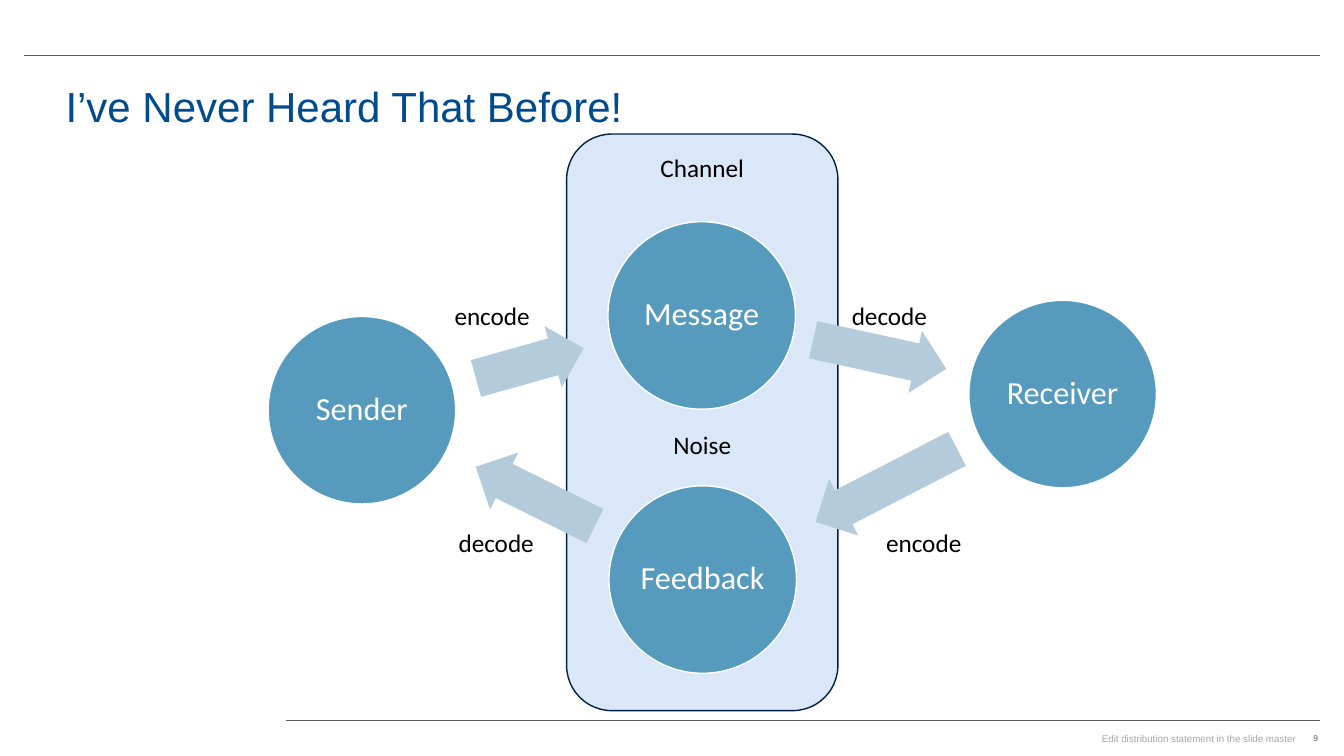
from dataclasses import dataclass

from pptx import Presentation
from pptx.dml.color import RGBColor
from pptx.enum import shapes, text
from pptx.oxml import ns
from pptx.util import Inches, Pt

NAVY = RGBColor(0x00, 0x4B, 0x8D)
OUTLINE = RGBColor(0x00, 0x21, 0x3E)
PALE_BLUE = RGBColor(0xD9, 0xE7, 0xF9)
CIRCLE_BLUE = RGBColor(0x56, 0x9B, 0xBE)
ARROW_BLUE = RGBColor(0xB4, 0xCB, 0xDB)
RULE_GRAY = RGBColor(0x59, 0x5A, 0x59)
FOOTER_GRAY = RGBColor(0xA6, 0xA6, 0xA6)
WHITE = RGBColor(0xFF, 0xFF, 0xFF)
BLACK = RGBColor(0x00, 0x00, 0x00)

CIRCLE_SIZE = 1.86
ARROW_HEIGHT = 0.63


@dataclass(frozen=True)
class Stage:
    name: str
    left: float
    top: float


@dataclass(frozen=True)
class Flow:
    left: float
    top: float
    length: float
    rotation: float


@dataclass(frozen=True)
class Label:
    wording: str
    left: float
    top: float
    width: float = 1.13
    height: float = 0.4
    size: float = 18
    font: str = "Calibri"
    color: RGBColor = BLACK
    align: text.PP_ALIGN = text.PP_ALIGN.LEFT


STAGES = [
    Stage("Message", 6.03, 2.2),
    Stage("Receiver", 9.61, 2.98),
    Stage("Feedback", 6.04, 4.82),
    Stage("Sender", 2.66, 3.14),
]
FLOWS = [
    Flow(8.05, 3.2, 1.35, 12.3),
    Flow(8, 4.5, 1.58, 152.7),
    Flow(4.65, 4.61, 1.32, 206.4),
    Flow(4.7, 3.29, 1.11, 344.3),
]
LABELS = [
    Label("encode", 4.41, 2.93),
    Label("encode", 8.69, 5.18),
    Label("decode", 8.35, 2.93),
    Label("decode", 4.45, 5.18),
    Label("Edit distribution statement in the slide master", 8.94, 7.22, 4.01, 0.22,
          7, "Arial", FOOTER_GRAY, text.PP_ALIGN.RIGHT),
    Label("9", 12.79, 7.22, 0.38, 0.2, 6, "Arial", RULE_GRAY, text.PP_ALIGN.RIGHT),
]


def format_text(frame, size: float, font: str, color: RGBColor, align: text.PP_ALIGN) -> None:
    for paragraph in frame.paragraphs:
        paragraph.alignment = align
        for run in paragraph.runs:
            run.font.size = Pt(size)
            run.font.name = font
            run.font.color.rgb = color


def add_filled(slide, kind: shapes.MSO_SHAPE, left: float, top: float, width: float,
               height: float, fill: RGBColor, outline: RGBColor | None = None):
    shape = slide.shapes.add_shape(kind, Inches(left), Inches(top), Inches(width), Inches(height))
    shape.shadow.inherit = False
    shape.fill.solid()
    shape.fill.fore_color.rgb = fill
    if outline is None:
        shape.line.fill.background()
    else:
        shape.line.color.rgb = outline
        shape.line.width = Pt(1)
    return shape


def add_rule(slide, left: float, top: float) -> None:
    rule = slide.shapes.add_connector(
        shapes.MSO_CONNECTOR.STRAIGHT, Inches(left), Inches(top), Inches(13.09), Inches(top))
    rule.line.color.rgb = RULE_GRAY
    rule.line.width = Pt(0.5)
    properties = rule.element.spPr
    properties.append(properties.makeelement(ns.qn("a:effectLst"), {}))


def add_title(slide) -> None:
    title = slide.shapes.title
    title.left, title.top = Inches(0.55), Inches(0.72)
    title.width, title.height = Inches(12.24), Inches(0.66)
    frame = title.text_frame
    frame.text = "I’ve Never Heard That Before!"
    frame.auto_size = text.MSO_AUTO_SIZE.NONE
    frame.vertical_anchor = text.MSO_ANCHOR.MIDDLE
    format_text(frame, 30, "Arial", NAVY, text.PP_ALIGN.LEFT)


def add_channel(slide) -> None:
    channel = add_filled(slide, shapes.MSO_SHAPE.ROUNDED_RECTANGLE, 5.62, 1.33, 2.69, 5.72,
                         PALE_BLUE, OUTLINE)
    frame = channel.text_frame
    frame.text = "Channel\nNoise"
    frame.vertical_anchor = text.MSO_ANCHOR.TOP
    frame.paragraphs[1].space_before = Pt(176)
    format_text(frame, 18, "Calibri", BLACK, text.PP_ALIGN.CENTER)


def add_stage(slide, stage: Stage) -> None:
    circle = add_filled(slide, shapes.MSO_SHAPE.OVAL, stage.left, stage.top,
                        CIRCLE_SIZE, CIRCLE_SIZE, CIRCLE_BLUE, WHITE)
    frame = circle.text_frame
    frame.text = stage.name
    frame.margin_left = frame.margin_right = Inches(0.03)
    frame.margin_top = frame.margin_bottom = Inches(0.03)
    frame.vertical_anchor = text.MSO_ANCHOR.MIDDLE
    frame.paragraphs[0].line_spacing = 0.9
    format_text(frame, 23, "Calibri", WHITE, text.PP_ALIGN.CENTER)


def add_flow(slide, flow: Flow) -> None:
    arrow = add_filled(slide, shapes.MSO_SHAPE.RIGHT_ARROW, flow.left, flow.top,
                       flow.length, ARROW_HEIGHT, ARROW_BLUE)
    arrow.adjustments[0] = 0.6
    arrow.adjustments[1] = 0.5
    arrow.rotation = flow.rotation


def add_label(slide, label: Label) -> None:
    box = slide.shapes.add_textbox(Inches(label.left), Inches(label.top),
                                   Inches(label.width), Inches(label.height))
    frame = box.text_frame
    frame.word_wrap = True
    frame.text = label.wording
    format_text(frame, label.size, label.font, label.color, label.align)


def main() -> None:
    deck = Presentation()
    deck.slide_width, deck.slide_height = Inches(13.33), Inches(7.5)
    slide = deck.slides.add_slide(deck.slide_layouts.get_by_name("Title Only"))
    add_rule(slide, 0.24, 0.55)
    add_rule(slide, 2.84, 7.15)
    add_channel(slide)
    add_title(slide)
    for stage, flow in zip(STAGES, FLOWS):
        add_stage(slide, stage)
        add_flow(slide, flow)
    for label in LABELS:
        add_label(slide, label)
    deck.save("out.pptx")


if __name__ == "__main__":
    main()
